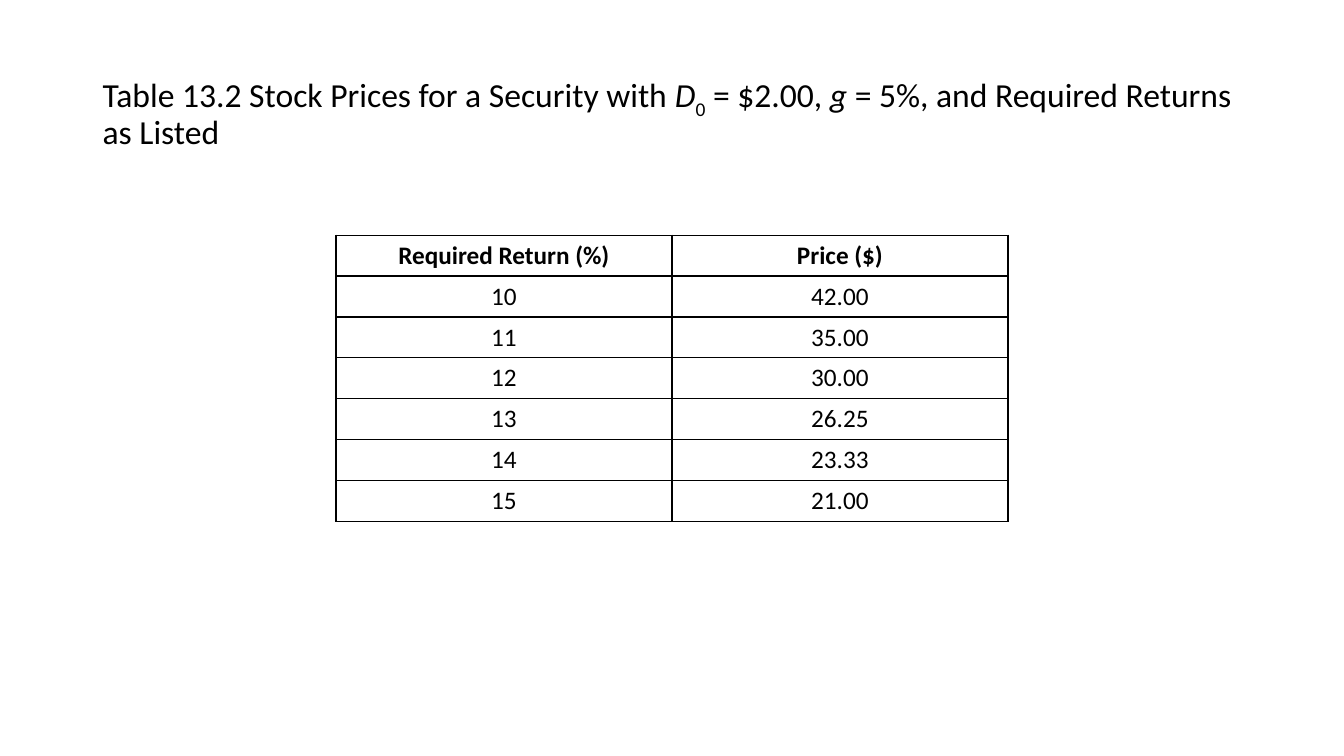
from dataclasses import dataclass

from lxml import etree
from pptx import Presentation
from pptx.dml.color import RGBColor
from pptx.enum.text import MSO_ANCHOR, PP_ALIGN
from pptx.oxml.ns import qn
from pptx.slide import Slide
from pptx.table import _Cell
from pptx.text.text import _Paragraph
from pptx.util import Inches, Pt

MIDDLE = MSO_ANCHOR.MIDDLE
LEFT = PP_ALIGN.LEFT
CENTER = PP_ALIGN.CENTER

BLACK = RGBColor(0x00, 0x00, 0x00)
FONT_NAME = "Calibri"
TITLE_SIZE = 24
TABLE_SIZE = 18
BORDER_WIDTH = Pt(1)
BLANK_LAYOUT = 6

SLIDE_WIDTH = Pt(960)
SLIDE_HEIGHT = Pt(540)
TABLE_TOP = Pt(168)
ROW_HEIGHT = Pt(29.2)


@dataclass(frozen=True)
class TextRun:
    text: str
    bold: bool = False
    italic: bool = False
    baseline: int = 0  # percent; negative for subscript


@dataclass(frozen=True)
class PriceRow:
    required_return: str
    price: str
    is_header: bool = False


TITLE_RUNS = [
    TextRun("Table 13.2 Stock Prices for a Security with "),
    TextRun("D", italic=True),
    TextRun("0", baseline=-25),
    TextRun(" = $2.00, "),
    TextRun("g ", italic=True),
    TextRun("= 5%, and Required Returns as Listed"),
]

PRICE_ROWS = [
    PriceRow("Required Return (%)", "Price ($)", is_header=True),
    PriceRow("10", "42.00"),
    PriceRow("11", "35.00"),
    PriceRow("12", "30.00"),
    PriceRow("13", "26.25"),
    PriceRow("14", "23.33"),
    PriceRow("15", "21.00"),
]


def add_run(paragraph: _Paragraph, text_run: TextRun, size: int) -> None:
    run = paragraph.add_run()
    run.text = text_run.text
    font = run.font
    font.name = FONT_NAME
    font.size = Pt(size)
    font.bold = text_run.bold
    font.italic = text_run.italic
    font.color.rgb = BLACK
    if text_run.baseline:
        font._element.set("baseline", str(text_run.baseline * 1000))


def add_borders(cell: _Cell) -> None:
    properties = cell._tc.get_or_add_tcPr()
    # Border lines come before the fill in the cell properties
    for position, side in enumerate(("lnL", "lnR", "lnT", "lnB")):
        line = etree.Element(qn(f"a:{side}"), w=str(BORDER_WIDTH))
        fill = etree.SubElement(line, qn("a:solidFill"))
        etree.SubElement(fill, qn("a:srgbClr"), val=str(BLACK))
        properties.insert(position, line)


def add_title(slide: Slide) -> None:
    title = slide.shapes.add_textbox(
        Inches(0.92), Inches(0.4), Inches(11.5), Inches(1.45)
    )
    frame = title.text_frame
    frame.word_wrap = True
    frame.vertical_anchor = MIDDLE
    paragraph = frame.paragraphs[0]
    paragraph.alignment = LEFT
    paragraph.line_spacing = 0.9
    for text_run in TITLE_RUNS:
        add_run(paragraph, text_run, TITLE_SIZE)


def add_price_table(slide: Slide) -> None:
    # The table spans the middle half of the slide
    row_count = len(PRICE_ROWS)
    table = slide.shapes.add_table(
        row_count, 2, SLIDE_WIDTH // 4, TABLE_TOP,
        SLIDE_WIDTH // 2, ROW_HEIGHT * row_count,
    ).table
    table.horz_banding = False
    for row_index, price_row in enumerate(PRICE_ROWS):
        values = (price_row.required_return, price_row.price)
        for column_index, value in enumerate(values):
            cell = table.cell(row_index, column_index)
            cell.fill.background()
            add_borders(cell)
            paragraph = cell.text_frame.paragraphs[0]
            paragraph.alignment = CENTER
            add_run(paragraph, TextRun(value, bold=price_row.is_header), TABLE_SIZE)


def main() -> None:
    presentation = Presentation()
    presentation.slide_width = SLIDE_WIDTH
    presentation.slide_height = SLIDE_HEIGHT
    slide = presentation.slides.add_slide(presentation.slide_layouts[BLANK_LAYOUT])
    add_title(slide)
    add_price_table(slide)
    presentation.save("out.pptx")


if __name__ == "__main__":
    main()
